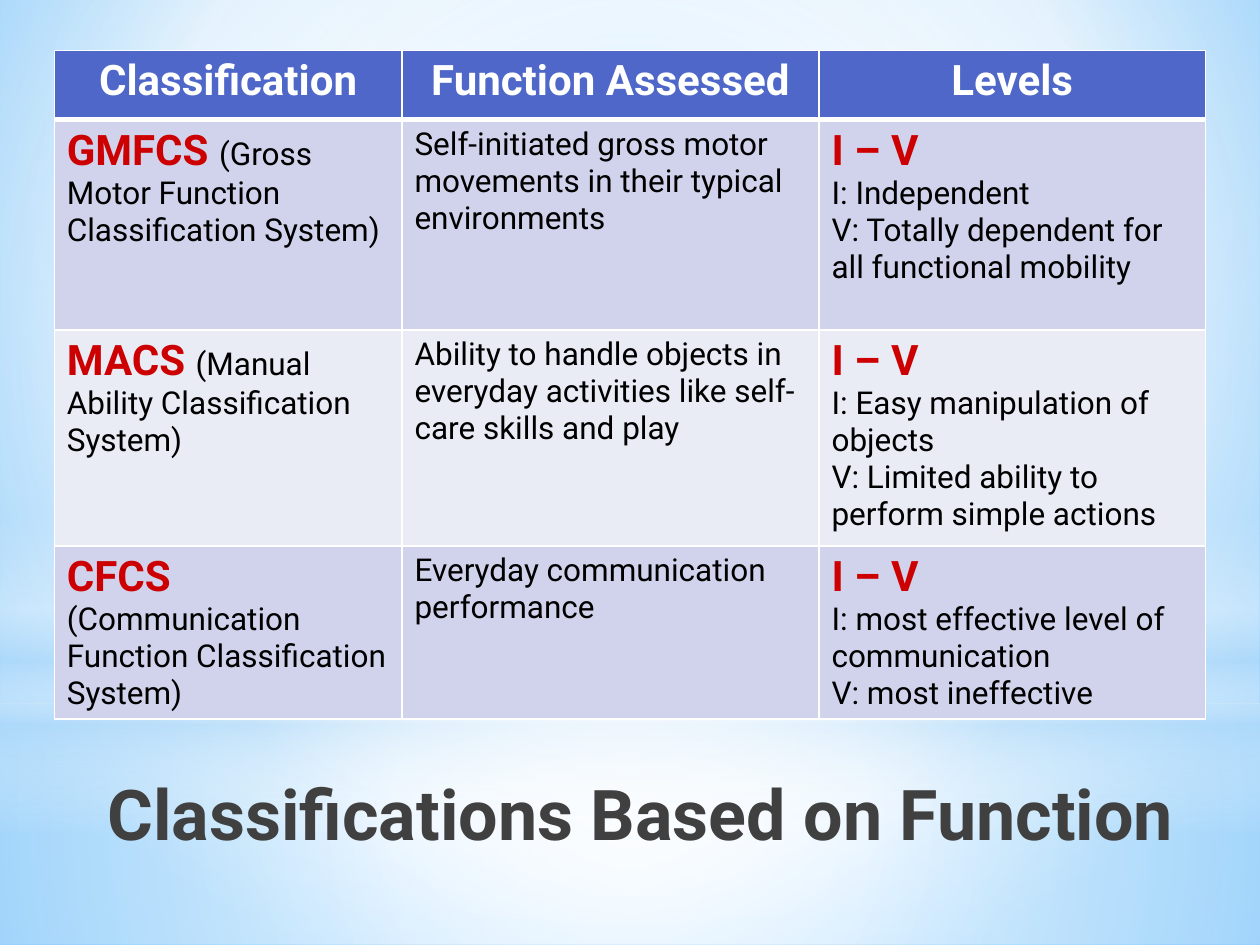
from lxml.etree import SubElement
from pptx import Presentation
from pptx.dml.color import RGBColor as Color
from pptx.enum.shapes import MSO_SHAPE as Shape
from pptx.enum.text import MSO_ANCHOR as Anchor, MSO_AUTO_SIZE as AutoSize, PP_ALIGN as Align
from pptx.oxml.ns import qn
from pptx.util import Pt

THEME = {
    "font": "Roboto",
    "header_fill": "4E67C8",
    "bands": ("D0D3EB", "E9EBF5"),
    "border": "FFFFFF",
    "title": {"size": 40, "color": "404040", "bold": True},
    "header": {"size": 24, "color": "FFFFFF", "bold": True},
    "key": {"size": 24, "color": "CC0000", "bold": True},
    "body": {"size": 18, "color": "000000", "bold": False},
}

TITLE = "Classifications Based on Function"
HEADERS = ("Classification", "Function Assessed", "Levels")
SYSTEMS = [
    ("GMFCS", "(Gross Motor Function Classification System)",
     "Self-initiated gross motor movements in their typical environments",
     ("I: Independent", "V: Totally dependent for all functional mobility")),
    ("MACS", "(Manual Ability Classification System)",
     "Ability to handle objects in everyday activities like self-care skills and play",
     ("I: Easy manipulation of objects", "V: Limited ability to perform simple actions")),
    ("CFCS", "(Communication Function Classification System)",
     "Everyday communication performance",
     ("I: most effective level of communication", "V: most ineffective")),
]
LEVEL_RANGE = "I – V"

COLUMN_WIDTHS = (198.7, 238.3, 221)
ROW_HEIGHTS = (39.6, 120.2, 123.4, 98.6)
TABLE_LEFT, TABLE_TOP = 31, 28.8
TITLE_BOX = (25.2, 434.2, 652.3, 67.7)

CENTER = (50, 50, 50, 50)
BACKGROUND = {"stops": [(0, "9ED5FF", 100), (60, "FFFFFF", 100), (100, "5BB9FF", 100)],
              "focus": (20, 10, 20, 60)}
GLOWS = [
    (Shape.RECTANGLE, (0, 401.8, 720, 138.2),
     {"stops": [(0, "FFFFFF", 91), (37, "FFFFFF", 76), (100, "B4DCFA", 79)], "focus": CENTER}),
    (Shape.RECTANGLE, (0, 0, 720, 401.8),
     {"stops": [(0, "FFFFFF", 89), (48, "FFFFFF", 62), (100, "B4DCFA", 79)], "focus": CENTER}),
    (Shape.RECTANGLE, (0, 296.6, 720, 180),
     {"stops": [(0, "FFFFFF", 0), (29, "FFFFFF", 30), (45, "B4DCFA", 40),
                (55, "FFFFFF", 26), (65, "B4DCFA", 60), (100, "FFFFFF", 0)], "angle": 90}),
    (Shape.OVAL, (0, 126, 720, 401.8),
     {"stops": [(0, "FFFFFF", 100), (56, "FFFFFF", 0)], "focus": CENTER}),
]


def add_node(parent, tag, **attributes):
    return SubElement(parent, qn(tag), {name: str(value) for name, value in attributes.items()})


def paint_gradient(properties, stops, focus=None, angle=0):
    solid = properties.find(qn("a:solidFill"))
    gradient = add_node(properties, "a:gradFill", rotWithShape=1)
    properties.replace(solid, gradient)
    stop_list = add_node(gradient, "a:gsLst")
    for position, color, opacity in stops:
        stop = add_node(stop_list, "a:gs", pos=position * 1000)
        color_node = add_node(stop, "a:srgbClr", val=color)
        if opacity < 100:
            add_node(color_node, "a:alpha", val=opacity * 1000)
    if focus:
        radial = add_node(gradient, "a:path", path="circle")
        add_node(radial, "a:fillToRect", **{side: value * 1000 for side, value in zip("ltrb", focus)})
    else:
        add_node(gradient, "a:lin", ang=angle * 60000, scaled=0)


def write(frame, paragraphs, align=Align.LEFT):
    for index, spans in enumerate(paragraphs):
        para = frame.add_paragraph() if index else frame.paragraphs[0]
        para.alignment = align
        for text, role in spans:
            span = para.add_run()
            span.text = text
            style = THEME[role]
            span.font.name = THEME["font"]
            span.font.size = Pt(style["size"])
            span.font.bold = style["bold"]
            span.font.color.rgb = Color.from_string(style["color"])


def format_cell(cell, fill, top=1, bottom=1):
    properties = cell._tc.get_or_add_tcPr()
    for side, width in (("L", 1), ("R", 1), ("T", top), ("B", bottom)):
        line = add_node(properties, f"a:ln{side}", w=Pt(width))
        add_node(add_node(line, "a:solidFill"), "a:srgbClr", val=THEME["border"])
    cell.fill.solid()
    cell.fill.fore_color.rgb = Color.from_string(fill)


def add_glow(slide, kind, bounds, gradient):
    glow = slide.shapes.add_shape(kind, *map(Pt, bounds))
    glow.shadow.inherit = False
    glow.line.fill.background()
    glow.fill.solid()
    paint_gradient(glow.element.spPr, **gradient)


def add_title(slide):
    title = slide.shapes.title
    title.left, title.top, title.width, title.height = map(Pt, TITLE_BOX)
    title.element.getparent().append(title.element)
    frame = title.text_frame
    frame.auto_size = AutoSize.NONE
    frame.word_wrap = True
    frame.vertical_anchor = Anchor.TOP
    frame.margin_top = Pt(6)
    write(frame, [[(TITLE, "title")]], align=Align.RIGHT)


def add_classification_table(slide):
    table = slide.shapes.add_table(
        len(ROW_HEIGHTS), len(COLUMN_WIDTHS), Pt(TABLE_LEFT), Pt(TABLE_TOP),
        Pt(sum(COLUMN_WIDTHS)), Pt(sum(ROW_HEIGHTS))).table
    for column, width in zip(table.columns, COLUMN_WIDTHS):
        column.width = Pt(width)
    for row, height in zip(table.rows, ROW_HEIGHTS):
        row.height = Pt(height)
    for column, header in enumerate(HEADERS):
        cell = table.cell(0, column)
        format_cell(cell, THEME["header_fill"], bottom=3)
        write(cell.text_frame, [[(header, "header")]], align=Align.CENTER)
    for row, (acronym, meaning, function, levels) in enumerate(SYSTEMS, start=1):
        contents = (
            [[(acronym + " ", "key"), (meaning, "body")]],
            [[(function, "body")]],
            [[(LEVEL_RANGE, "key")]] + [[(level, "body")] for level in levels],
        )
        for column, paragraphs in enumerate(contents):
            cell = table.cell(row, column)
            format_cell(cell, THEME["bands"][(row - 1) % 2], top=3 if row == 1 else 1)
            write(cell.text_frame, paragraphs)


def main():
    deck = Presentation()
    deck.slide_width, deck.slide_height = Pt(720), Pt(540)
    slide = deck.slides.add_slide(deck.slide_layouts[5])
    slide.background.fill.solid()
    paint_gradient(slide.element.cSld.bg.bgPr, **BACKGROUND)
    for kind, bounds, gradient in GLOWS:
        add_glow(slide, kind, bounds, gradient)
    add_title(slide)
    add_classification_table(slide)
    deck.save("out.pptx")


if __name__ == "__main__":
    main()
